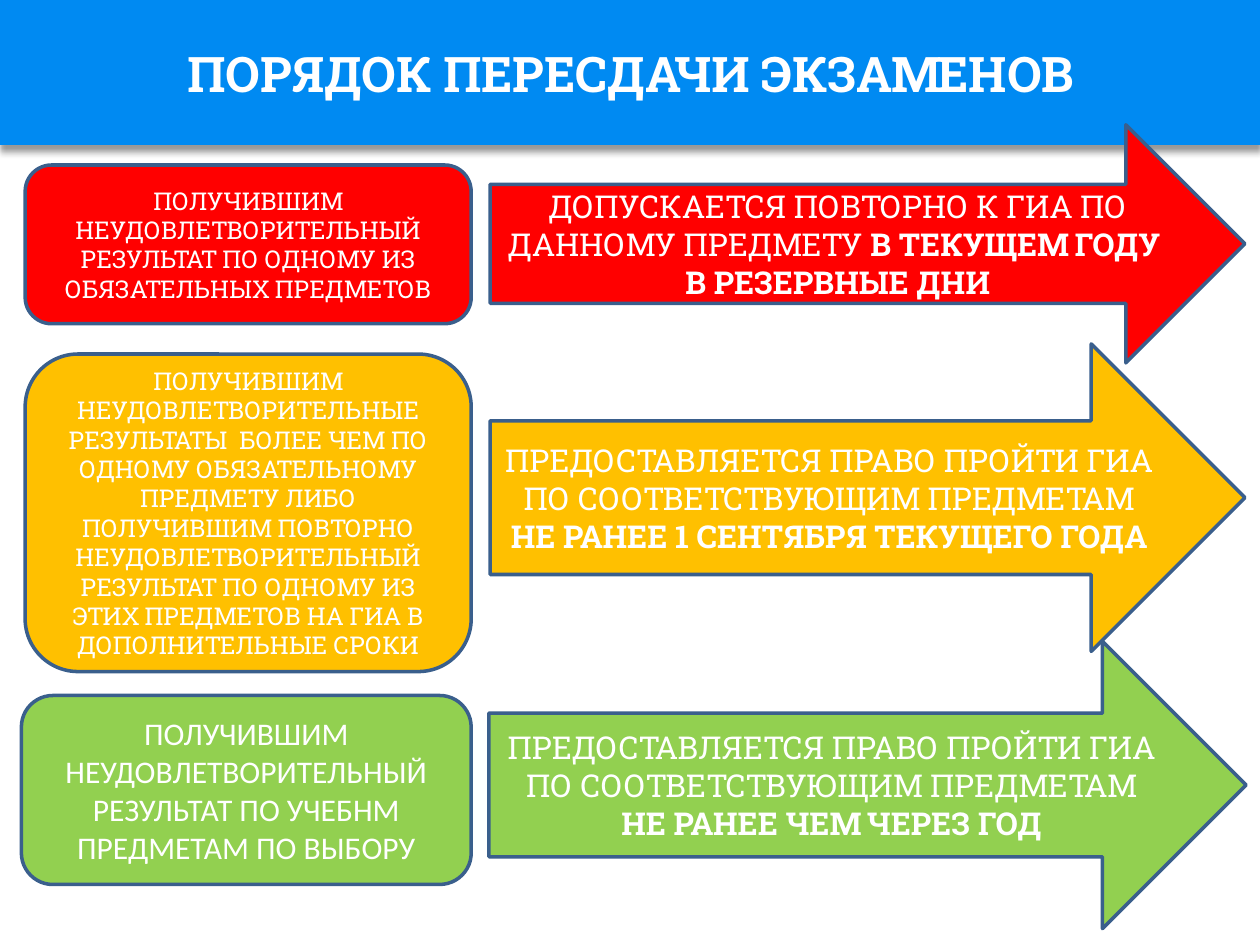
from dataclasses import dataclass

import pptx
from lxml import etree
from pptx.dml.color import RGBColor
from pptx.enum.shapes import MSO_SHAPE
from pptx.enum.text import MSO_ANCHOR, PP_ALIGN
from pptx.oxml.ns import qn
from pptx.util import Inches, Pt


@dataclass(frozen=True)
class Theme:
    banner: str = "008AF2"
    outline: str = "3A5F8C"
    text: str = "FFFFFF"
    shadow: str = "000000"
    red: str = "FF0000"
    amber: str = "FFC000"
    green: str = "92D050"
    slab: str = "Roboto Slab"
    sans: str = "Calibri"
    title_size: int = 28
    body_size: int = 18
    small_size: int = 14


THEME = Theme()

# Each step: colour, box (position, text, font, size), arrow (position, plain text, bold text)
STEPS = [
    (THEME.red,
     ((0.2, 1.31, 3.54, 1.26),
      "ПОЛУЧИВШИМ НЕУДОВЛЕТВОРИТЕЛЬНЫЙ РЕЗУЛЬТАТ ПО ОДНОМУ ИЗ "
      "ОБЯЗАТЕЛЬНЫХ ПРЕДМЕТОВ", THEME.slab, THEME.small_size),
     ((3.89, 0.99, 5.99, 1.89),
      "ДОПУСКАЕТСЯ ПОВТОРНО К ГИА ПО ДАННОМУ ПРЕДМЕТУ ",
      "В ТЕКУЩЕМ ГОДУ  В РЕЗЕРВНЫЕ ДНИ")),
    (THEME.amber,
     ((0.2, 2.81, 3.54, 2.52),
      "ПОЛУЧИВШИМ НЕУДОВЛЕТВОРИТЕЛЬНЫЕ РЕЗУЛЬТАТЫ  БОЛЕЕ ЧЕМ ПО ОДНОМУ "
      "ОБЯЗАТЕЛЬНОМУ ПРЕДМЕТУ ЛИБО ПОЛУЧИВШИМ ПОВТОРНО "
      "НЕУДОВЛЕТВОРИТЕЛЬНЫЙ РЕЗУЛЬТАТ ПО ОДНОМУ ИЗ ЭТИХ ПРЕДМЕТОВ НА ГИА В "
      "ДОПОЛНИТЕЛЬНЫЕ СРОКИ", THEME.slab, THEME.small_size),
     ((3.89, 2.73, 5.99, 2.44),
      "ПРЕДОСТАВЛЯЕТСЯ ПРАВО ПРОЙТИ ГИА ПО СООТВЕТСТВУЮЩИМ ПРЕДМЕТАМ ",
      "НЕ РАНЕЕ 1 СЕНТЯБРЯ ТЕКУЩЕГО ГОДА")),
    (THEME.green,
     ((0.17, 5.52, 3.57, 1.5),
      "ПОЛУЧИВШИМ НЕУДОВЛЕТВОРИТЕЛЬНЫЙ РЕЗУЛЬТАТ ПО УЧЕБНМ ПРЕДМЕТАМ "
      "ПО ВЫБОРУ", THEME.sans, THEME.body_size),
     ((3.88, 5.09, 6.01, 2.28),
      "ПРЕДОСТАВЛЯЕТСЯ ПРАВО ПРОЙТИ ГИА ПО СООТВЕТСТВУЮЩИМ ПРЕДМЕТАМ ",
      "НЕ РАНЕЕ ЧЕМ ЧЕРЕЗ ГОД")),
]


def fill_solid(shape, color):
    shape.fill.solid()
    shape.fill.fore_color.rgb = RGBColor.from_string(color)


def write_text(shape, runs, font_name, size):
    """Write (text, bold) runs as one centred paragraph."""
    frame = shape.text_frame
    frame.word_wrap = True
    frame.vertical_anchor = MSO_ANCHOR.MIDDLE
    paragraph = frame.paragraphs[0]
    paragraph.alignment = PP_ALIGN.CENTER
    for text, bold in runs:
        run = paragraph.add_run()
        run.text = text
        run.font.name = font_name
        run.font.size = Pt(size)
        run.font.bold = bold
        run.font.color.rgb = RGBColor.from_string(THEME.text)


def add_bottom_shadow(shape):
    effects = etree.SubElement(shape._element.spPr, qn("a:effectLst"))
    shadow = etree.SubElement(
        effects, qn("a:outerShdw"), blurRad=str(Pt(4)), dist=str(Pt(4)),
        dir="5400000", algn="t", rotWithShape="0")
    color = etree.SubElement(shadow, qn("a:srgbClr"), val=THEME.shadow)
    etree.SubElement(color, qn("a:alpha"), val="40000")


def add_title_banner(slide, text):
    title = slide.shapes.title
    title.left, title.top = Inches(0), Inches(0)
    title.width, title.height = Inches(10.01), Inches(1.15)
    fill_solid(title, THEME.banner)
    add_bottom_shadow(title)
    write_text(title, [(text, True)], THEME.slab, THEME.title_size)


def add_block(slide, kind, position, color, runs, font_name, size):
    shape = slide.shapes.add_shape(kind, *map(Inches, position))
    shape.shadow.inherit = False
    fill_solid(shape, color)
    shape.line.color.rgb = RGBColor.from_string(THEME.outline)
    shape.line.width = Pt(2)
    write_text(shape, runs, font_name, size)


def main():
    presentation = pptx.Presentation()
    presentation.slide_width = Inches(10)
    presentation.slide_height = Inches(7.5)
    slide = presentation.slides.add_slide(
        presentation.slide_layouts.get_by_name("Title Only"))

    add_title_banner(slide, "ПОРЯДОК ПЕРЕСДАЧИ ЭКЗАМЕНОВ")
    for color, (position, text, font_name, size), _ in STEPS:
        add_block(slide, MSO_SHAPE.ROUNDED_RECTANGLE, position, color,
                  [(text, False)], font_name, size)
    for color, _, (position, plain, bold) in STEPS:
        add_block(slide, MSO_SHAPE.RIGHT_ARROW, position, color,
                  [(plain, False), (bold, True)], THEME.slab, THEME.body_size)

    presentation.save("out.pptx")


if __name__ == "__main__":
    main()
